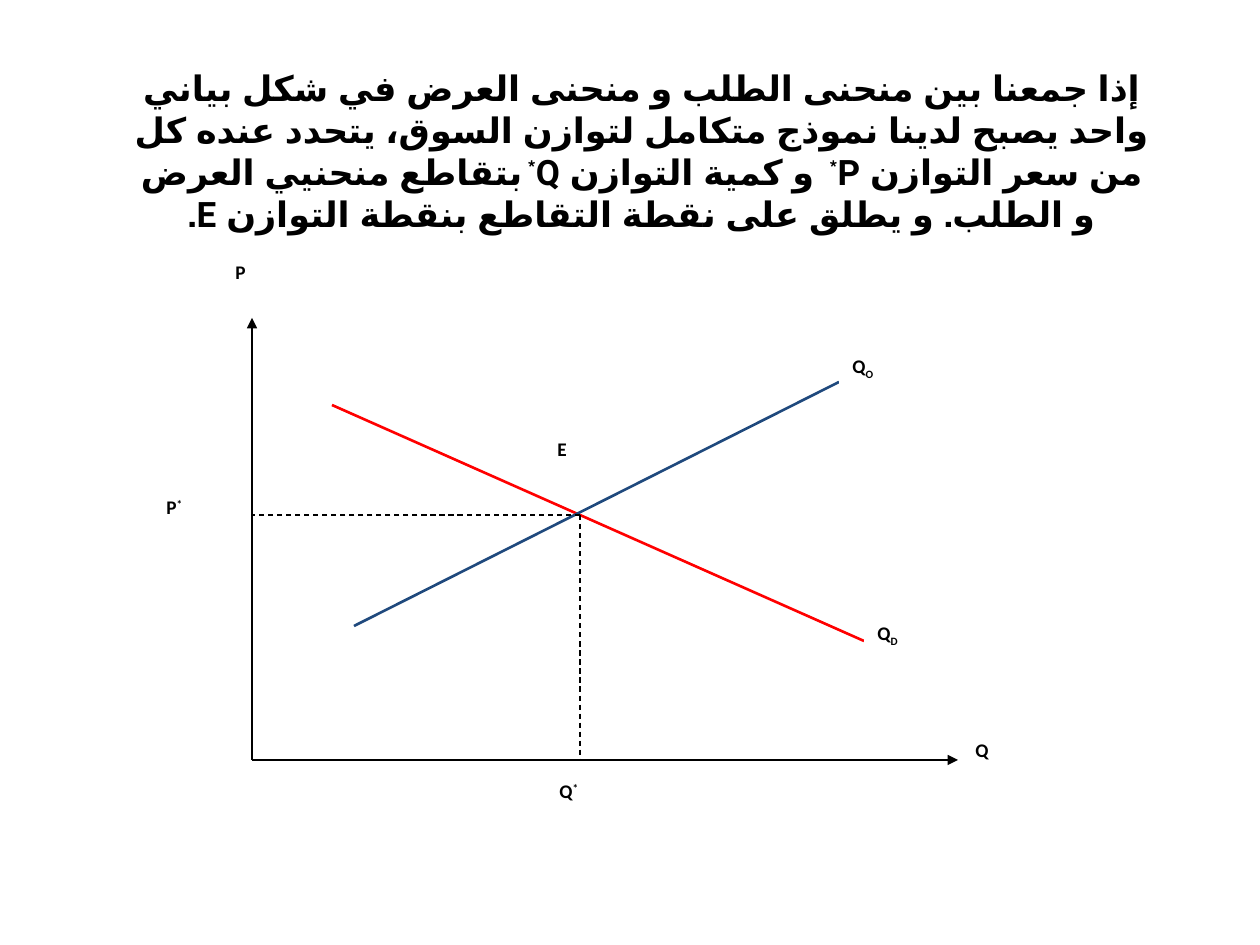
"""Build a slide that shows market equilibrium where supply meets demand."""
from lxml import etree
from pptx import Presentation
from pptx import util as u
from pptx.dml.color import RGBColor
from pptx.enum import dml, lang, shapes, text
from pptx.oxml.ns import qn

PX = u.Inches(1) / 126
BLACK, WHITE, RED, BLUE = "000000", "FFFFFF", "FF0000", "1F497D"


def px(*lengths):
    return [u.Emu(round(length * PX)) for length in lengths]


def write(paragraph, runs, size, font, align, language, color=BLACK):
    paragraph.alignment = align
    for words, baseline in runs:
        run = paragraph.add_run()
        run.text = words
        run.font.size = u.Pt(size)
        run.font.bold = True
        run.font.color.rgb = RGBColor.from_string(color)
        run.font.name = font
        run.font.language_id = language
        if baseline:
            run.font._element.set("baseline", str(baseline * 1000))


presentation = Presentation()
presentation.slide_width, presentation.slide_height = px(1260, 945)
slide = presentation.slides.add_slide(presentation.slide_layouts[6])

title = slide.shapes.add_textbox(*px(118, 81, 1047, 140)).text_frame
title.word_wrap = True
title.auto_size = text.MSO_AUTO_SIZE.SHAPE_TO_FIT_TEXT
title.vertical_anchor = text.MSO_ANCHOR.MIDDLE
title.paragraphs[0]._p.get_or_add_pPr().set("rtl", "1")
title_runs = [
    ("إذا جمعنا بين منحنى الطلب و منحنى العرض في شكل بياني واحد يصبح لدينا نموذج "
     "متكامل لتوازن السوق، يتحدد عنده كل من سعر التوازن P", 0),
    ("* ", 30),
    (" و كمية التوازن Q", 0),
    ("* ", 30),
    ("بتقاطع منحنيي العرض و الطلب. و يطلق على نقطة التقاطع بنقطة التوازن E.", 0),
]
write(title.paragraphs[0], title_runs, 20, "Roboto", text.PP_ALIGN.CENTER,
      lang.MSO_LANGUAGE_ID.ARABIC_ALGERIA)

diagram = slide.shapes.add_group_shape().shapes
origin, equilibrium = (252, 760), (580, 515)
lines = [
    (origin, (958, 760), BLACK, 0.75, "arrow"),
    (origin, (252, 318), BLACK, 0.75, "arrow"),
    ((332, 405), (864, 641), RED, 1.5, "solid"),
    ((354, 626), (839, 382), BLUE, 1.5, "solid"),
    (equilibrium, (equilibrium[0], origin[1]), BLACK, 0.75, "dash"),
    (equilibrium, (origin[0], equilibrium[1]), BLACK, 0.75, "dash"),
]
for start, end, color, width, style in lines:
    connector = diagram.add_connector(shapes.MSO_CONNECTOR.STRAIGHT, *px(*start, *end))
    connector.line.color.rgb = RGBColor.from_string(color)
    connector.line.width = u.Pt(width)
    if style == "dash":
        connector.line.dash_style = dml.MSO_LINE.DASH
    if style == "arrow":
        line_xml = connector.line._get_or_add_ln()
        etree.SubElement(line_xml, qn("a:tailEnd")).set("type", "triangle")
    etree.SubElement(connector._element.spPr, qn("a:effectLst"))

labels = [
    (223, 254, 64, [("P", 0)]),
    (865, 615, 73, [("Q", 0), ("D", -25)]),
    (840, 348, 89, [("Q", 0), ("O", -25)]),
    (963, 732, 64, [("Q", 0)]),
    (547, 773, 83, [("Q", 0), ("*", 30)]),
    (545, 431, 64, [("E", 0)]),
    (154, 489, 82, [("P", 0), ("*", 30)]),
]
for left, top, width, runs in labels:
    label = diagram.add_shape(shapes.MSO_SHAPE.RECTANGLE, *px(left, top, width, 57))
    label.shadow.inherit = False
    label.fill.solid()
    label.fill.fore_color.rgb = RGBColor.from_string(WHITE)
    label.line.color.rgb = RGBColor.from_string(WHITE)
    label.line.width = u.Pt(0.75)
    label.text_frame.vertical_anchor = text.MSO_ANCHOR.TOP
    paragraph = label.text_frame.paragraphs[0]
    paragraph.space_after = u.Pt(10)
    write(paragraph, runs, 11, "Calibri", text.PP_ALIGN.LEFT,
          lang.MSO_LANGUAGE_ID.ENGLISH_US)

presentation.save("out.pptx")
